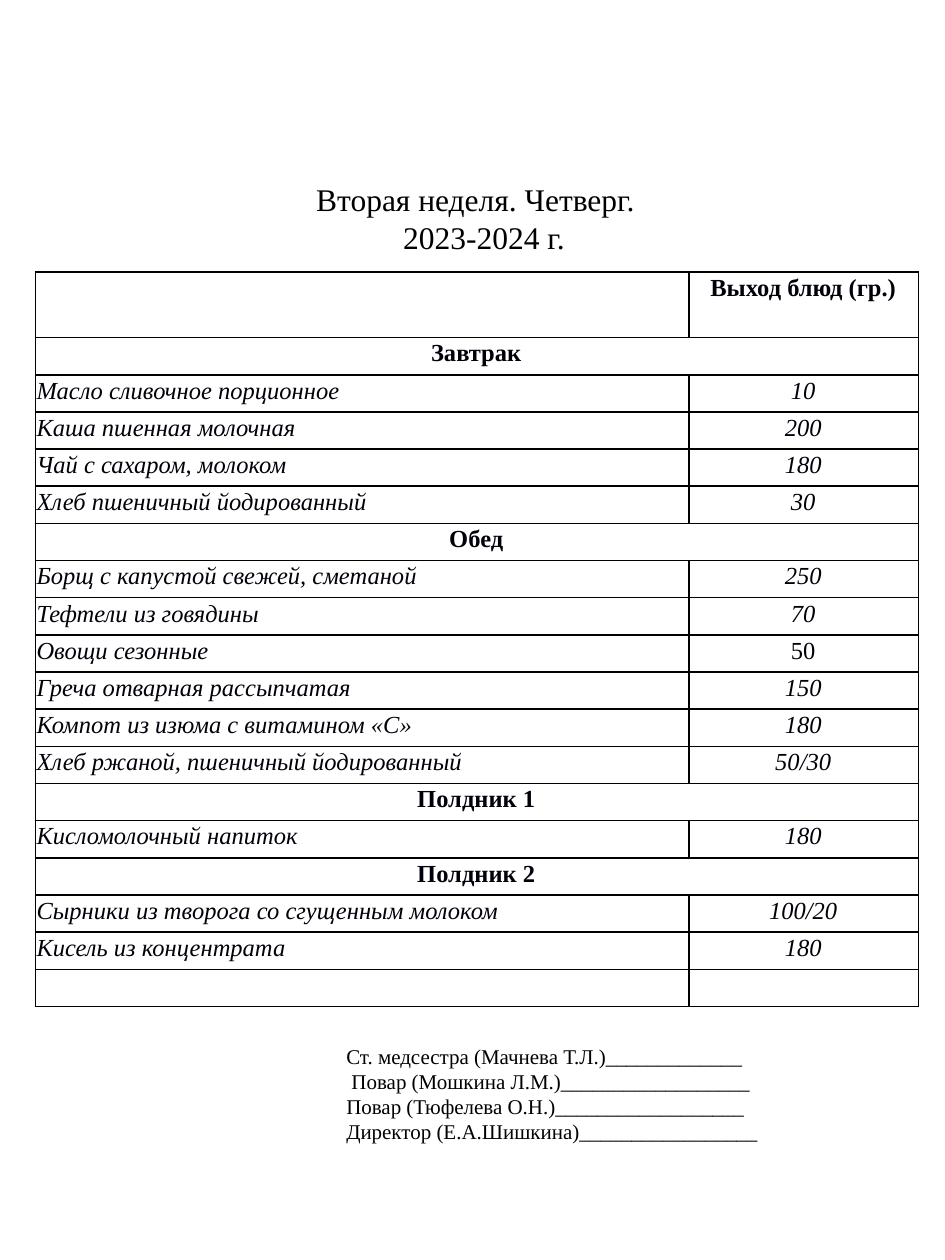
from lxml.etree import SubElement
from pptx import Presentation
from pptx.dml.color import RGBColor
from pptx.enum.text import MSO_ANCHOR, MSO_AUTO_SIZE, PP_ALIGN
from pptx.oxml.ns import qn
from pptx.util import Inches, Pt

COLS, ROWS = 75, 100
HEADER = "Выход блюд (гр.)"
MENU = {
    "Завтрак": [
        ("Масло сливочное порционное", "10"),
        ("Каша пшенная молочная", "200"),
        ("Чай с сахаром, молоком", "180"),
        ("Хлеб пшеничный йодированный", "30"),
    ],
    "Обед": [
        ("Борщ с капустой свежей, сметаной", "250"),
        ("Тефтели из говядины", "70"),
        ("Овощи сезонные", "50"),
        ("Греча отварная рассыпчатая", "150"),
        ("Компот из изюма с витамином «С»", "180"),
        ("Хлеб ржаной, пшеничный йодированный", "50/30"),
    ],
    "Полдник 1": [("Кисломолочный напиток", "180")],
    "Полдник 2": [
        ("Сырники из творога со сгущенным молоком", "100/20"),
        ("Кисель из концентрата", "180"),
    ],
}
UPRIGHT = {"Овощи сезонные"}
SIGNATURES = [
    "Ст. медсестра (Мачнева Т.Л.)_____________",
    " Повар (Мошкина Л.М.)__________________",
    "Повар (Тюфелева О.Н.)__________________",
    "Директор (Е.А.Шишкина)_________________",
]


def rgb(value):
    return RGBColor.from_string(value)


class MenuSlide:
    """Builds a menu slide on a grid of COLS by ROWS units in one text style."""

    font = "Times New Roman"
    ink, cell_ink, rule = "000000", "00000A", "000001"

    def __init__(self, prs):
        self.prs = prs
        self.s = prs.slides.add_slide(prs.slide_layouts[5])

    def x(self, n):
        return round(self.prs.slide_width * n / COLS)

    def y(self, n):
        return round(self.prs.slide_height * n / ROWS)

    def box(self, left, top, width, height):
        return self.x(left), self.y(top), self.x(width), self.y(height)

    def run(self, p, text, color, align=PP_ALIGN.LEFT, **fmt):
        p.alignment = align
        r = p.add_run()
        r.text = text
        r.font.color.rgb = rgb(color)
        for name, value in {"name": self.font, **fmt}.items():
            setattr(r.font, name, value)

    def lines(self, sp, texts, size):
        tf = sp.text_frame
        fmt = {"word_wrap": True, "auto_size": MSO_AUTO_SIZE.NONE,
               "vertical_anchor": MSO_ANCHOR.TOP}
        for name, value in fmt.items():
            setattr(tf, name, value)
        for i, text in enumerate(texts):
            p = tf.add_paragraph() if i else tf.paragraphs[0]
            self.run(p, text, self.ink, size=Pt(size))
        return tf

    def title(self, texts, indent, *place):
        sp = self.s.shapes.title
        sp.left, sp.top, sp.width, sp.height = self.box(*place)
        tf = self.lines(sp, texts, 18)
        tf.paragraphs[-1]._p.get_or_add_pPr().set("marL", str(self.x(indent)))

    def text(self, texts, *place):
        self.lines(self.s.shapes.add_textbox(*self.box(*place)), texts, 12)

    def cell(self, cell, text="", align=PP_ALIGN.CENTER, **fmt):
        margins = {"margin_left": 0.01, "margin_right": 0.02,
                   "margin_top": 0.02, "margin_bottom": 0.02}
        for name, value in margins.items():
            setattr(cell, name, Inches(value))
        tcPr = cell._tc.get_or_add_tcPr()
        for side in ("lnL", "lnR", "lnT", "lnB"):
            ln = SubElement(tcPr, qn(f"a:{side}"), w=str(Pt(1)))
            fill = SubElement(ln, qn("a:solidFill"))
            SubElement(fill, qn("a:srgbClr"), val=self.rule)
        cell.fill.background()
        p = cell.text_frame.paragraphs[0]
        if text:
            self.run(p, text, self.cell_ink, align, size=Pt(14), **fmt)
        else:
            SubElement(p._p, qn("a:endParaRPr"), sz="1400")

    def table(self, left, top, widths, header_height, row_height):
        rows = [("", HEADER)]
        for meal, dishes in MENU.items():
            rows += [(meal, None), *dishes]
        rows.append(("", ""))
        height = header_height + row_height * (len(rows) - 1)
        place = self.box(left, top, sum(widths), height)
        table = self.s.shapes.add_table(len(rows), 2, *place).table
        table.first_row = table.horz_banding = False
        for column, width in zip(table.columns, widths):
            column.width = self.x(width)
        for i, (dish, amount) in enumerate(rows):
            table.rows[i].height = self.y(row_height if i else header_height)
            name, output = table.cell(i, 0), table.cell(i, 1)
            if amount is None:
                name.merge(output)
                self.cell(name, dish, bold=True)
                self.cell(output)
            else:
                self.cell(name, dish, PP_ALIGN.LEFT, italic=True)
                self.cell(output, amount, bold=i == 0,
                          italic=i > 0 and dish not in UPRIGHT)


def main():
    prs = Presentation()
    prs.slide_width, prs.slide_height = Inches(7.5), Inches(10)
    menu = MenuSlide(prs)
    menu.title(["Вторая неделя. Четверг.", "2023-2024 г."], 6.9,
               24.1, 13.8, 37, 7.1)
    menu.table(2.8, 21.6, (51.9, 18.2), 5.2, 2.95)
    menu.text(SIGNATURES, 26.5, 82.3, 39.4, 12.1)
    prs.save("out.pptx")


if __name__ == "__main__":
    main()
